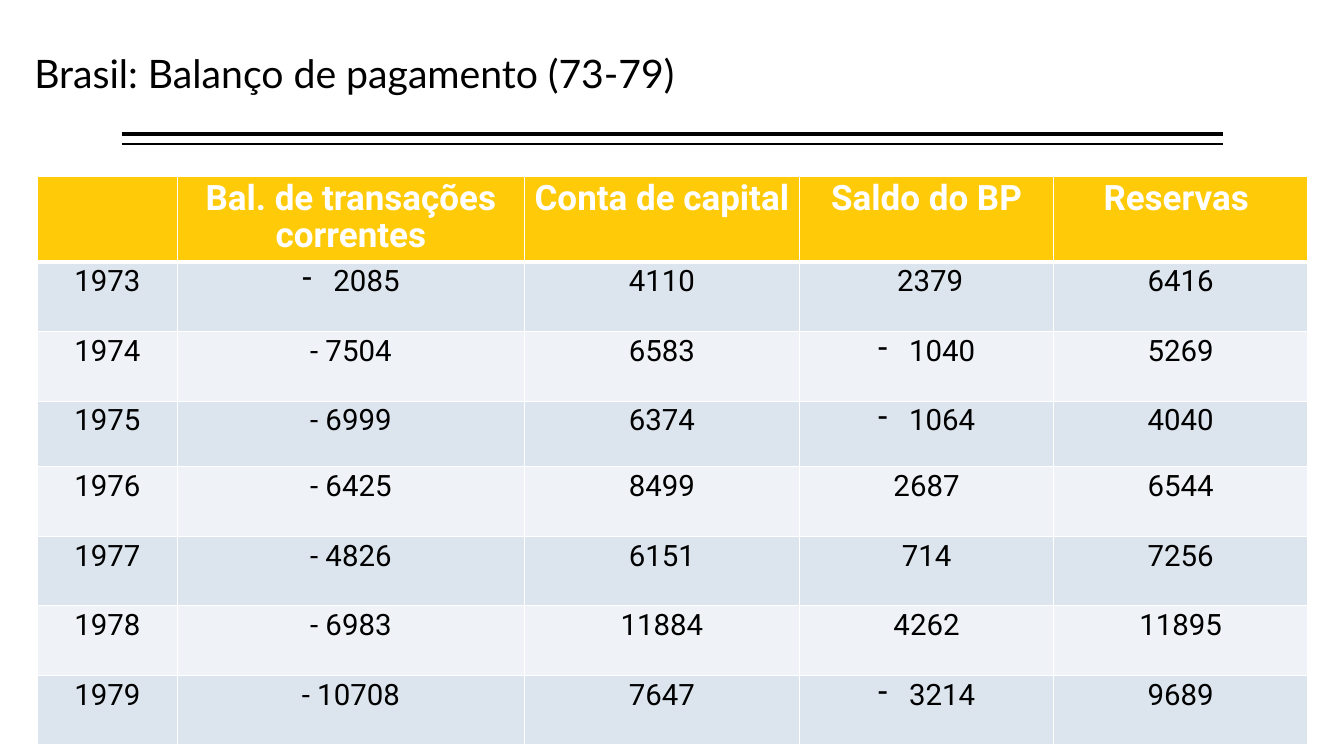
import pptx
import pptx.dml.color
import pptx.enum.shapes
import pptx.enum.text
import pptx.oxml
import pptx.oxml.ns
import pptx.util

PX = 9144
COLORS = {"ink": "000000", "paper": "FFFFFF", "header": "FFCA08",
          "odd": "DCE5EE", "even": "EFF3F7"}
FORMATS = {
    "title": {"name": "Lato", "size": pptx.util.Pt(28), "bold": False},
    "header": {"name": "Roboto", "size": pptx.util.Pt(25), "bold": True},
    "body": {"name": "Roboto", "size": pptx.util.Pt(21), "bold": False},
}
ROWS = [
    ["", "Bal. de transações correntes", "Conta de capital ", "Saldo do BP", "Reservas "],
    ["1973", "2085", "4110", " 2379", "6416"],
    ["1974", "- 7504", "6583", "1040", "5269"],
    ["1975", "- 6999", "6374", "1064", "4040"],
    ["1976", "- 6425", "8499", "2687", "6544"],
    ["1977", "- 4826", "6151", "714", "7256"],
    ["1978", "- 6983", "11884", "4262", "11895"],
    ["1979", "- 10708", "7647", "3214", "9689"],
]
DASHED = {(1, 1), (2, 3), (3, 3), (7, 3)}
COL_WIDTHS = [139, 344, 273, 252, 252]
ROW_HEIGHTS = [85, 69, 69, 65, 69, 69, 69, 69]


def rgb(color):
    return pptx.dml.color.RGBColor.from_string(COLORS[color])


class Deck:
    """Holds the style and the current slide, and adds each kind of element."""

    def __init__(self, width, height):
        self.prs = pptx.Presentation()
        self.prs.slide_width, self.prs.slide_height = width * PX, height * PX
        self.s = self.prs.slides.add_slide(self.prs.slide_layouts[5])

    def text(self, p, text, style, color, align):
        p.alignment = align
        p.line_spacing = 0.9
        r = p.add_run()
        r.text = text
        for key, value in FORMATS[style].items():
            setattr(r.font, key, value)
        r.font.color.rgb = rgb(color)

    def title(self, text, left, top, width, height):
        sp = self.s.shapes.title
        box = {"left": left, "top": top, "width": width, "height": height}
        for key, value in box.items():
            setattr(sp, key, value * PX)
        tf = sp.text_frame
        tf.word_wrap = True
        tf.vertical_anchor = pptx.enum.text.MSO_ANCHOR.MIDDLE
        self.text(tf.paragraphs[0], text, "title", "ink", pptx.enum.text.PP_ALIGN.LEFT)

    def rule(self, left, right, y, weight):
        line = self.s.shapes.add_connector(
            pptx.enum.shapes.MSO_CONNECTOR.STRAIGHT, left * PX, y * PX, right * PX, y * PX)
        line.line.color.rgb = rgb("ink")
        line.line.width = pptx.util.Pt(weight)
        line._element.spPr.append(self.xml("<a:effectLst %s/>"))

    def xml(self, markup):
        return pptx.oxml.parse_xml(markup % pptx.oxml.ns.nsdecls("a"))

    def borders(self, cell, row):
        tc_pr = cell._tc.get_or_add_tcPr()
        weights = {"L": 1, "R": 1, "T": 3 if row == 1 else 1, "B": 3 if row == 0 else 1}
        for side, weight in weights.items():
            tc_pr.append(self.xml(
                f'<a:ln{side} %s w="{weight * 12700}"><a:solidFill>'
                f'<a:srgbClr val="{COLORS["paper"]}"/></a:solidFill></a:ln{side}>'))

    def dash(self, p):
        p_pr = p._p.get_or_add_pPr()
        p_pr.set("marL", str(31 * PX))
        p_pr.set("indent", str(-31 * PX))
        p_pr.append(self.xml('<a:buChar %s char="-"/>'))

    def cell(self, cell, row, col, text):
        self.borders(cell, row)
        cell.fill.solid()
        fill = "header" if row == 0 else "odd" if row % 2 else "even"
        cell.fill.fore_color.rgb = rgb(fill)
        if not text:
            return
        p = cell.text_frame.paragraphs[0]
        if (row, col) in DASHED:
            self.dash(p)
        style, color = ("body", "ink") if row else ("header", "paper")
        self.text(p, text, style, color, pptx.enum.text.PP_ALIGN.CENTER)

    def table(self, rows, left, top, widths, heights):
        table = self.s.shapes.add_table(
            len(rows), len(widths), left * PX, top * PX,
            sum(widths) * PX, sum(heights) * PX).table
        for column, width in zip(table.columns, widths):
            column.width = width * PX
        for line, height in zip(table.rows, heights):
            line.height = height * PX
        for row, values in enumerate(rows):
            for col, text in enumerate(values):
                self.cell(table.cell(row, col), row, col, text)


def main():
    deck = Deck(1333, 750)
    deck.rule(121, 1213, 133, 3)
    deck.rule(121, 1213, 143, 1)
    deck.title("Brasil: Balanço de pagamento (73-79)", 24, 21, 1307, 108)
    deck.table(ROWS, 37, 175, COL_WIDTHS, ROW_HEIGHTS)
    deck.prs.save("out.pptx")


if __name__ == "__main__":
    main()
